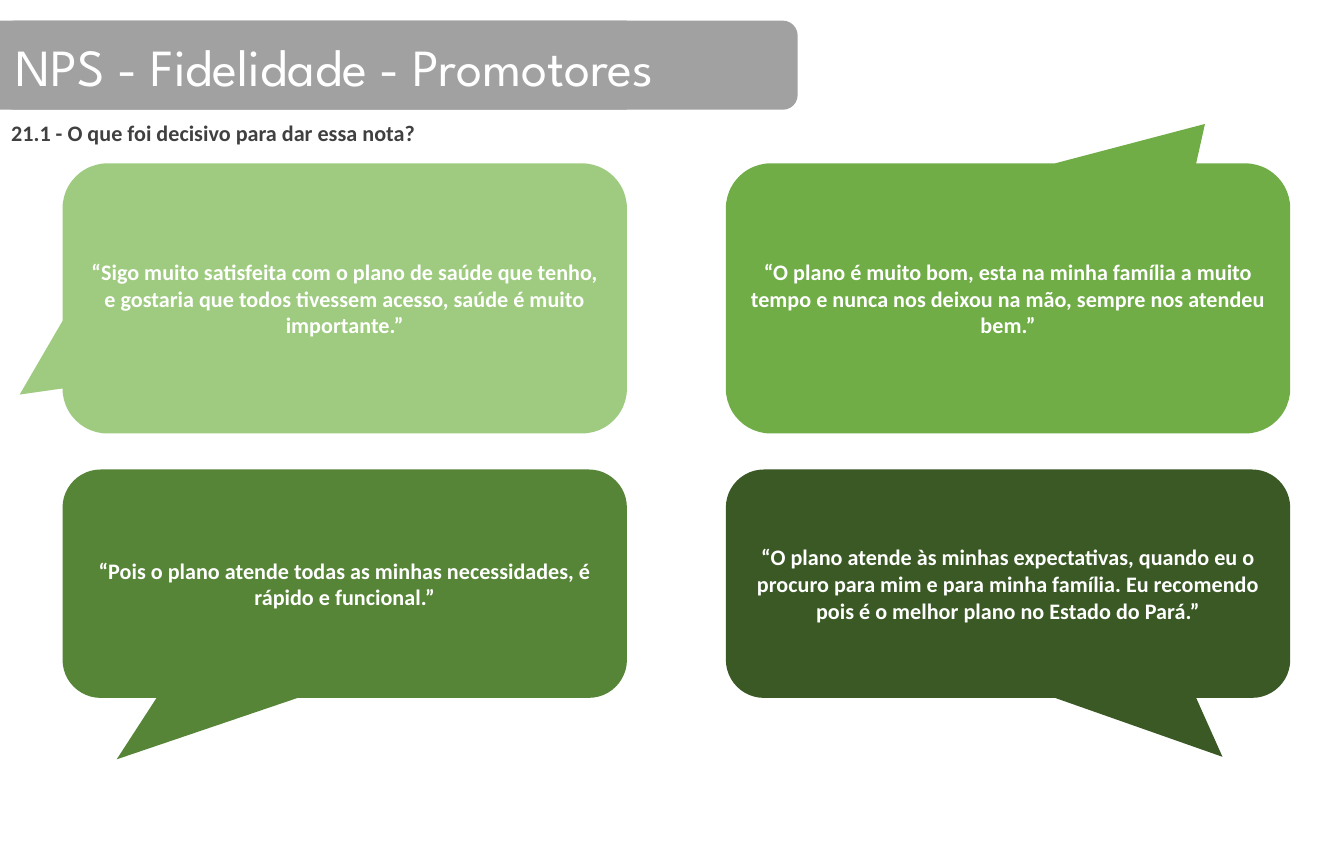
"""Build the slide of promoter quotes about the loyalty score."""
import pptx
import pptx.dml.color
import pptx.enum.shapes
import pptx.enum.text
import pptx.util

Pt = pptx.util.Pt
RGB = pptx.dml.color.RGBColor.from_string
SHAPE = pptx.enum.shapes.MSO_SHAPE
ALIGN = pptx.enum.text.PP_ALIGN
ANCHOR = pptx.enum.text.MSO_ANCHOR

THEME = {
    "band": "A1A1A1",
    "greens": ["9ECB7F", "70AD47", "578537", "3A5925"],
    "title": {"name": "League Spartan", "size": Pt(33), "bold": False, "color": "FFFFFF"},
    "question": {"name": "Calibri", "size": Pt(14), "bold": True, "color": "404040"},
    "quote": {"name": "Calibri", "size": Pt(14), "bold": True, "color": "FFFFFF"},
}


def add_filled(page, kind, frame, color):
    """Add a flat shape without outline."""
    shape = page.shapes.add_shape(kind, *map(Pt, frame))
    shape.shadow.inherit = False
    shape.fill.solid()
    shape.fill.fore_color.rgb = RGB(color)
    shape.line.fill.background()
    return shape


def write(box, text, style, align, anchor):
    """Put one formatted paragraph into a box."""
    frame = box.text_frame
    frame.word_wrap = True
    frame.vertical_anchor = anchor
    para = frame.paragraphs[0]
    para.alignment = align
    span = para.add_run()
    span.text = text
    for key, value in style.items():
        if key == "color":
            span.font.color.rgb = RGB(value)
        else:
            setattr(span.font, key, value)


deck = pptx.Presentation()
deck.slide_width, deck.slide_height = Pt(850.38), Pt(540)
page = deck.slides.add_slide(deck.slide_layouts[6])

add_filled(page, SHAPE.RECTANGLE, (0, 13.1, 396.7, 56.4), THEME["band"])
title = add_filled(page, SHAPE.ROUNDED_RECTANGLE, (0, 13.1, 504.7, 56.4), THEME["band"])
write(title, "NPS - Fidelidade - Promotores", THEME["title"], ALIGN.LEFT, ANCHOR.MIDDLE)

question = page.shapes.add_textbox(Pt(0), Pt(72), Pt(732.2), Pt(24.5))
write(question, "21.1 - O que foi decisivo para dar essa nota?",
      THEME["question"], ALIGN.JUSTIFY, ANCHOR.TOP)

columns = [39.6, 459.3]
rows = [(103.4, 171), (297.2, 144.6)]
callout_width = 357.1
quotes = [
    ("“Sigo muito satisfeita com o plano de saúde que tenho, e gostaria que todos "
     "tivessem acesso, saúde é muito importante.”", (-0.576, 0.356)),
    ("“O plano é muito bom, esta na minha família a muito tempo e nunca nos deixou "
     "na mão, sempre nos atendeu bem.”", (0.349, -0.646)),
    ("“Pois o plano atende todas as minhas necessidades, é rápido e funcional.”",
     (-0.404, 0.769)),
    ("“O plano atende às minhas expectativas, quando eu o procuro para mim e para "
     "minha família. Eu recomendo pois é o melhor plano no Estado do Pará.”",
     (0.38, 0.758)),
]
for index, ((text, tail), color) in enumerate(zip(quotes, THEME["greens"])):
    row, column = divmod(index, 2)
    top, height = rows[row]
    callout = add_filled(page, SHAPE.ROUNDED_RECTANGULAR_CALLOUT,
                         (columns[column], top, callout_width, height), color)
    callout.adjustments[0], callout.adjustments[1] = tail
    write(callout, text, THEME["quote"], ALIGN.CENTER, ANCHOR.MIDDLE)

deck.save("out.pptx")
